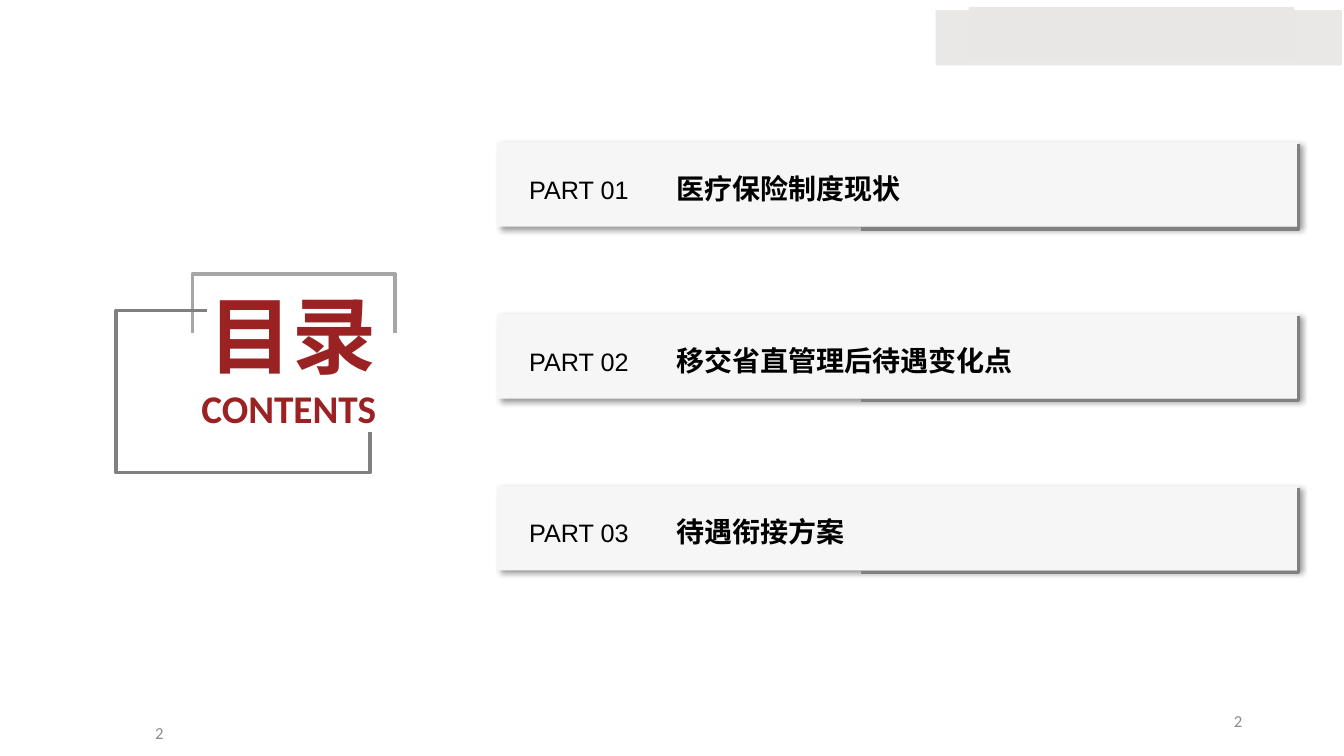
from lxml import etree
from pptx import Presentation
from pptx.dml.color import RGBColor
from pptx.enum import shapes, text
from pptx.oxml import parse_xml
from pptx.oxml.ns import nsdecls, qn
from pptx.util import Inches, Pt

HEADING = [("目录", 60), ("CONTENTS", 28)]
PARTS = [
    ("PART 01", "医疗保险制度现状"),
    ("PART 02", "移交省直管理后待遇变化点"),
    ("PART 03", "待遇衔接方案"),
]
PAGE_NUMBER = "2"
NUMBER_BOXES = [(9.42, 6.95, 3, 0.4), (0.33, 7.07, 1.39, 0.4)]

RED = RGBColor(0x9A, 0x22, 0x22)
BLACK = RGBColor(0, 0, 0)
CARD_GRAY = RGBColor(0xF6, 0xF6, 0xF6)
LINE_GRAY = RGBColor(0x80, 0x80, 0x80)
LIGHT_LINE = RGBColor(0xA6, 0xA6, 0xA6)
NUMBER_GRAY = RGBColor(0x8C, 0x8C, 0x8C)
BANNERS = [
    ((9.28, 0.1, 4.03, 0.55), RGBColor(0xE9, 0xE8, 0xE7)),
    ((9.61, 0.07, 3.23, 0.52), RGBColor(0xE8, 0xE7, 0xE6)),
]
BRACKETS = [
    ([(1.91, 3.3), (1.91, 2.72), (3.92, 2.72), (3.92, 3.3)], LIGHT_LINE),
    ([(3.67, 4.29), (3.67, 4.69), (1.15, 4.69), (1.15, 3.08), (2.05, 3.08)], LINE_GRAY),
]

CARD_LEFT, CARD_TOP, CARD_WIDTH, CARD_HEIGHT = 4.93, 1.41, 7.95, 0.84
CARD_PITCH = 1.705
NAME_TAB = 1.46


def inches(values):
    return [Inches(value) for value in values]


def add_rect(slide, area, color):
    rect = slide.shapes.add_shape(shapes.MSO_SHAPE.RECTANGLE, *inches(area))
    rect.shadow.inherit = False
    rect.fill.solid()
    rect.fill.fore_color.rgb = color
    rect.line.fill.background()
    return rect


def add_outline(slide, points, color):
    """Draw an open, unfilled line through the points."""
    corners = [inches(point) for point in points]
    builder = slide.shapes.build_freeform(*corners[0])
    builder.add_line_segments(corners[1:], close=False)
    outline = builder.convert_to_shape()
    outline.shadow.inherit = False
    outline.fill.background()
    outline.line.color.rgb = color
    outline.line.width = Pt(2.5)


def add_run(para, words, font, size, color, bold=False):
    span = para.add_run()
    span.text = words
    span.font.name = font
    span.font.size = Pt(size)
    span.font.bold = bold
    span.font.color.rgb = color


def add_text_box(slide, area):
    box = slide.shapes.add_textbox(*inches(area))
    box.text_frame.word_wrap = True
    return box


def add_drop_shadow(shape):
    effects = shape._element.spPr.find(qn("a:effectLst"))
    effects.append(parse_xml(
        f'<a:outerShdw {nsdecls("a")} blurRad="{Pt(4)}" dist="{Pt(3)}" dir="2700000" '
        'algn="tl" rotWithShape="0"><a:srgbClr val="000000"><a:alpha val="40000"/>'
        '</a:srgbClr></a:outerShdw>'))


def add_tab_stop(para, position):
    tabs = etree.SubElement(para._p.get_or_add_pPr(), qn("a:tabLst"))
    etree.SubElement(tabs, qn("a:tab"), pos=str(Inches(position)), algn="l")


def add_heading(slide):
    title = slide.shapes.title
    title.left, title.top, title.width, title.height = inches((0.34, 2.76, 3.49, 1.58))
    frame = title.text_frame
    frame.word_wrap = True
    frame.auto_size = text.MSO_AUTO_SIZE.NONE
    frame.vertical_anchor = text.MSO_ANCHOR.TOP
    for index, (words, size) in enumerate(HEADING):
        para = frame.add_paragraph() if index else frame.paragraphs[0]
        para.alignment = text.PP_ALIGN.RIGHT
        add_run(para, words, "Calibri", size, RED, bold=True)


def add_part(slide, top, label, name):
    card = add_rect(slide, (CARD_LEFT, top, CARD_WIDTH, CARD_HEIGHT), CARD_GRAY)
    add_drop_shadow(card)
    box = add_text_box(slide, (CARD_LEFT + 0.22, top + 0.24, 8.43, 0.44))
    para = box.text_frame.paragraphs[0]
    add_tab_stop(para, NAME_TAB)
    add_run(para, label + "\t", "Arial", 18, BLACK)
    add_run(para, name, "Arial", 20, BLACK, bold=True)
    right, edge_top = CARD_LEFT + CARD_WIDTH, top + 0.02
    bottom = edge_top + CARD_HEIGHT
    add_outline(slide, [(right, edge_top), (right, bottom), (8.54, bottom)], LINE_GRAY)


def main():
    deck = Presentation()
    deck.slide_width, deck.slide_height = Inches(13.33), Inches(7.5)
    slide = deck.slides.add_slide(deck.slide_layouts[5])
    for area, color in BANNERS:
        add_rect(slide, area, color)
    for area in NUMBER_BOXES:
        frame = add_text_box(slide, area).text_frame
        frame.vertical_anchor = text.MSO_ANCHOR.MIDDLE
        frame.paragraphs[0].alignment = text.PP_ALIGN.RIGHT
        add_run(frame.paragraphs[0], PAGE_NUMBER, "Calibri", 12, NUMBER_GRAY)
    add_heading(slide)
    for points, color in BRACKETS:
        add_outline(slide, points, color)
    for index, (label, name) in enumerate(PARTS):
        add_part(slide, CARD_TOP + index * CARD_PITCH, label, name)
    deck.save("out.pptx")


if __name__ == "__main__":
    main()
